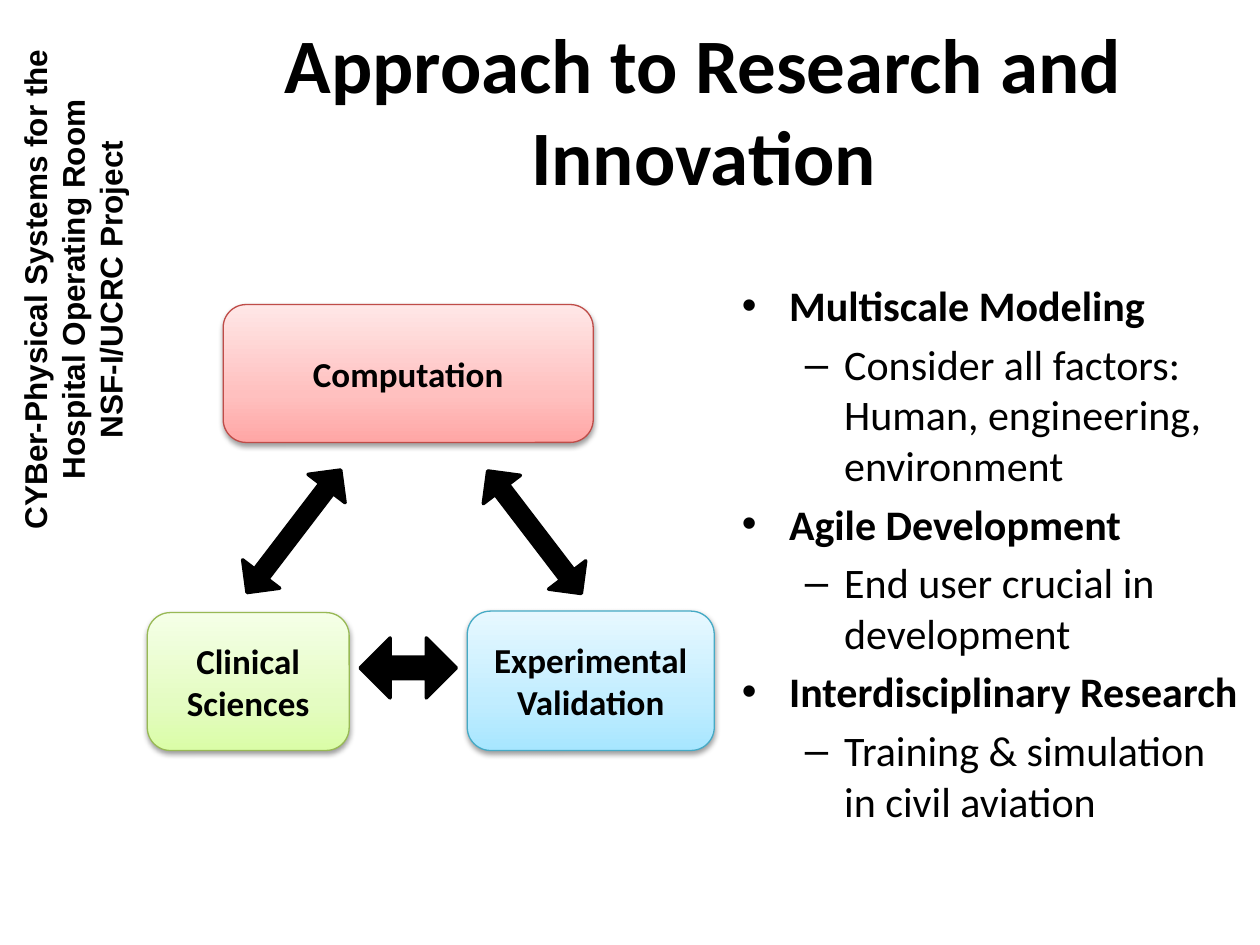
from copy import deepcopy
from dataclasses import dataclass

from pptx import Presentation
from pptx.dml.color import RGBColor
from pptx.enum.shapes import MSO_SHAPE
from pptx.enum.text import MSO_ANCHOR, MSO_AUTO_SIZE, PP_ALIGN
from pptx.oxml import parse_xml
from pptx.oxml.ns import nsdecls, qn
from pptx.util import Cm, Pt

ROUND_RECT = MSO_SHAPE.ROUNDED_RECTANGLE
DOUBLE_ARROW = MSO_SHAPE.LEFT_RIGHT_ARROW
CENTER = PP_ALIGN.CENTER
TOP, MIDDLE = MSO_ANCHOR.TOP, MSO_ANCHOR.MIDDLE
NO_FIT = MSO_AUTO_SIZE.NONE


@dataclass(frozen=True)
class Palette:
    """Line colour and gradient, from the bottom edge to the top."""
    line: str
    stops: tuple[str, str, str]


@dataclass(frozen=True)
class Theme:
    font: str = "Calibri"
    side_font: str = "Arial"
    ink: str = "000000"
    paper: str = "FFFFFF"
    title: int = 44
    body: int = 24
    label: int = 20
    side: int = 18
    red: Palette = Palette("BF4C48", ("FFA6A5", "FFC0BF", "FFE7E7"))
    green: Palette = Palette("98B955", ("DAFDA7", "E4FCC2", "F5FFE7"))
    blue: Palette = Palette("46AAC5", ("A7E6FF", "C1EDFF", "E7F8FF"))


THEME = Theme()
GRADIENT_POSITIONS = (0, 0.35, 1)


@dataclass(frozen=True)
class Frame:
    """Position and size in centimetres."""
    left: float
    top: float
    width: float
    height: float

    def lengths(self):
        return Cm(self.left), Cm(self.top), Cm(self.width), Cm(self.height)


@dataclass(frozen=True)
class Box:
    frame: Frame
    lines: tuple[str, ...]
    palette: Palette


@dataclass(frozen=True)
class Arrow:
    frame: Frame
    rotation: float = 0


@dataclass(frozen=True)
class Topic:
    heading: str
    detail: str


BOXES = (
    Box(Frame(4.5, 6.14, 7.46, 2.78), ("Computation",), THEME.red),
    Box(Frame(2.97, 12.35, 4.07, 2.78), ("Clinical", "Sciences"), THEME.green),
    Box(Frame(9.42, 12.32, 4.98, 2.81), ("Experimental", "Validation"), THEME.blue),
)
ARROWS = (
    Arrow(Frame(7.26, 12.86, 1.94, 1.21)),
    Arrow(Frame(4.37, 10.24, 3.11, 0.94), 307.4),
    Arrow(Frame(9.22, 10.26, 3.11, 0.94), 52.6),
)
TOPICS = (
    Topic("Multiscale Modeling", "Consider all factors: Human, engineering, environment"),
    Topic("Agile Development", "End user crucial in development"),
    Topic("Interdisciplinary Research", "Training & simulation in civil aviation"),
)


def rgb(value: str) -> RGBColor:
    return RGBColor.from_string(value)


def place(s, frame: Frame) -> None:
    s.left, s.top, s.width, s.height = frame.lengths()


def add_run(p, text: str, size: int, bold: bool = True, font: str = THEME.font) -> None:
    r = p.add_run()
    r.text = text
    r.font.name, r.font.size, r.font.bold = font, Pt(size), bold
    r.font.color.rgb = rgb(THEME.ink)


def next_paragraph(tf, index: int):
    return tf.add_paragraph() if index else tf.paragraphs[0]


def add_centered_lines(tf, lines: tuple[str, ...], size: int, font: str = THEME.font) -> None:
    for i, line in enumerate(lines):
        p = next_paragraph(tf, i)
        p.alignment = CENTER
        add_run(p, line, size, font=font)


def fill_gradient(s, colors: tuple[str, str, str]) -> None:
    s.fill.gradient()
    s.fill.gradient_angle = 90
    # The preset gradient has two stops; add the middle one
    stops = s._element.spPr.find(".//" + qn("a:gsLst"))
    stops.insert(1, deepcopy(stops[0]))
    for stop, position, color in zip(s.fill.gradient_stops, GRADIENT_POSITIONS, colors):
        stop.position = position
        stop.color.rgb = rgb(color)


def add_soft_shadow(s) -> None:
    s.shadow.inherit = False
    s._element.spPr.find(qn("a:effectLst")).append(parse_xml(
        f'<a:outerShdw {nsdecls("a")} blurRad="40000" dist="20000" dir="5400000"'
        f' rotWithShape="0"><a:srgbClr val="{THEME.ink}">'
        '<a:alpha val="38000"/></a:srgbClr></a:outerShdw>'))


def draw_box(slide, box: Box) -> None:
    s = slide.shapes.add_shape(ROUND_RECT, *box.frame.lengths())
    fill_gradient(s, box.palette.stops)
    s.line.color.rgb = rgb(box.palette.line)
    s.line.width = Pt(0.75)
    add_soft_shadow(s)
    tf = s.text_frame
    tf.word_wrap, tf.vertical_anchor = True, MIDDLE
    add_centered_lines(tf, box.lines, THEME.label)


def draw_arrow(slide, arrow: Arrow) -> None:
    s = slide.shapes.add_shape(DOUBLE_ARROW, *arrow.frame.lengths())
    s.adjustments[0], s.adjustments[1] = 0.36, 0.5
    s.rotation = arrow.rotation
    s.shadow.inherit = False
    s.fill.solid()
    s.fill.fore_color.rgb = rgb(THEME.ink)
    s.line.color.rgb = rgb(THEME.ink)
    s.line.width = Pt(2)


def draw_side_label(slide) -> None:
    sp = slide.shapes.add_textbox(*Frame(-4.34, 4.55, 11.63, 2.57).lengths())
    sp.rotation = 270
    tf = sp.text_frame
    tf.word_wrap = True
    lines = ("CYBer-Physical Systems for the Hospital Operating Room", "NSF-I/UCRC Project")
    add_centered_lines(tf, lines, THEME.side, THEME.side_font)


def fill_title(s) -> None:
    place(s, Frame(2.97, 0.2, 22.43, 4.01))
    s.fill.solid()
    s.fill.fore_color.rgb = rgb(THEME.paper)
    s.text_frame.auto_size = NO_FIT
    s.text_frame.vertical_anchor = TOP
    add_centered_lines(s.text_frame, ("Approach to Research and Innovation",), THEME.title)


def fill_topics(s) -> None:
    place(s, Frame(14.7, 5.51, 10.6, 12.57))
    tf = s.text_frame
    tf.auto_size = NO_FIT
    for i, topic in enumerate(TOPICS):
        add_run(next_paragraph(tf, i), topic.heading, THEME.body)
        p = tf.add_paragraph()
        p.level = 1
        add_run(p, topic.detail, THEME.body, bold=False)


def main() -> None:
    prs = Presentation()
    prs.slide_width, prs.slide_height = Cm(25.4), Cm(19.05)
    slide = prs.slides.add_slide(prs.slide_layouts[1])
    # Title, list and rotated project name
    fill_title(slide.shapes.title)
    fill_topics(slide.placeholders[1])
    draw_side_label(slide)
    # Triangle of linked fields
    for box in BOXES:
        draw_box(slide, box)
    for arrow in ARROWS:
        draw_arrow(slide, arrow)
    prs.save("out.pptx")


if __name__ == "__main__":
    main()
